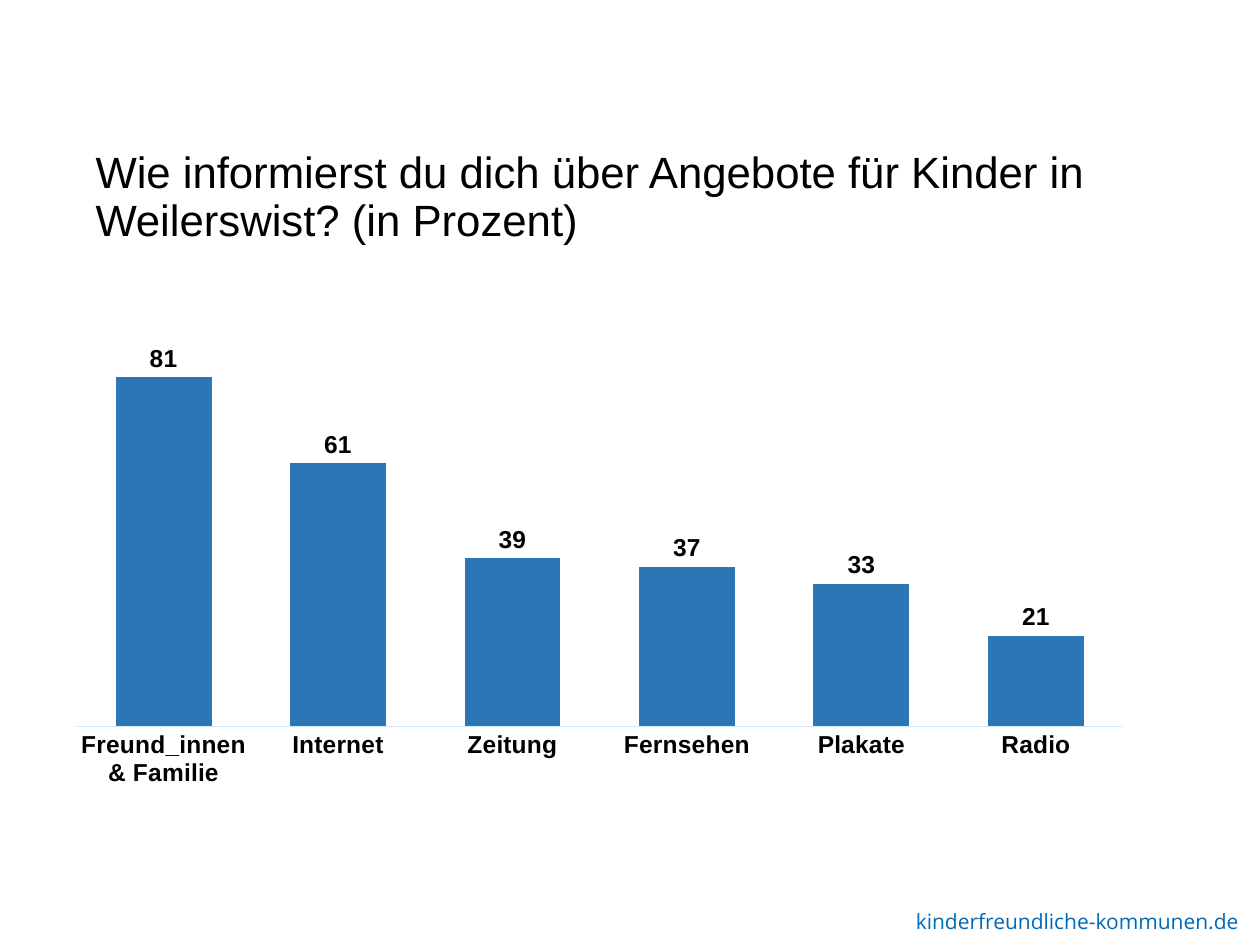
from dataclasses import dataclass

from lxml import etree
from pptx import Presentation
from pptx.chart.data import CategoryChartData
from pptx.dml.color import RGBColor
from pptx.enum.chart import XL_CHART_TYPE, XL_LABEL_POSITION, XL_TICK_MARK
from pptx.oxml.ns import qn
from pptx.util import Inches, Pt

COLUMN = XL_CHART_TYPE.COLUMN_CLUSTERED
OUTSIDE = XL_LABEL_POSITION.OUTSIDE_END
NO_TICK = XL_TICK_MARK.NONE

COLORS = {"text": "000000", "link": "0069B5", "bar": "2E75B6", "axis": "CEEAFF"}
SHARES = {
    "Freund_innen & Familie": 81,
    "Internet": 61,
    "Zeitung": 39,
    "Fernsehen": 37,
    "Plakate": 33,
    "Radio": 21,
}
PLOT = {"x": 0.05, "y": 0.12, "w": 0.91, "h": 0.64}


@dataclass
class Label:
    text: str
    box: tuple[float, float, float, float]
    font: str
    size: int
    color: str
    spacing: float = 1.0


LABELS = [
    Label("kinderfreundliche-kommunen.de", (7.17, 7.16, 2.93, 0.3),
          "Open Sans", 12, "link"),
    Label("Wie informierst du dich über Angebote für Kinder in "
          "Weilerswist? (in Prozent)", (0.66, 1.15, 8.62, 1.07),
          "Arial", 25, "text", 0.9),
]


def color(name: str) -> RGBColor:
    return RGBColor.from_string(COLORS[name])


def style(font, name: str, size: int, tint: str, bold: bool = False) -> None:
    font.name = name
    font.size = Pt(size)
    font.bold = bold
    font.color.rgb = color(tint)


def add_label(slide, label: Label) -> None:
    frame = slide.shapes.add_textbox(*map(Inches, label.box)).text_frame
    frame.word_wrap = True
    frame.text = label.text
    para = frame.paragraphs[0]
    para.line_spacing = label.spacing
    style(para.runs[0].font, label.font, label.size, label.color)


def set_plot(chart) -> None:
    area = chart._chartSpace.find(".//" + qn("c:plotArea"))
    for old in area.findall(qn("c:layout")):
        area.remove(old)
    layout = etree.Element(qn("c:layout"))
    manual = etree.SubElement(layout, qn("c:manualLayout"))
    parts = {"layoutTarget": "inner", "xMode": "edge", "yMode": "edge", **PLOT}
    for tag, value in parts.items():
        etree.SubElement(manual, qn(f"c:{tag}")).set("val", str(value))
    area.insert(0, layout)


def add_bars(slide) -> None:
    data = CategoryChartData()
    data.categories = list(SHARES)
    data.add_series("Series 1", list(SHARES.values()))
    box = map(Inches, (0.15, 2.11, 9.13, 4.81))
    chart = slide.shapes.add_chart(COLUMN, *box, data).chart
    chart.has_legend = False
    chart.has_title = False
    style(chart.font, "Arial", 14, "text", True)
    set_plot(chart)

    scale = chart.value_axis
    scale.minimum_scale = 0
    scale.maximum_scale = 90
    scale.has_major_gridlines = False
    scale.visible = False

    axis = chart.category_axis
    axis.major_tick_mark = NO_TICK
    axis.minor_tick_mark = NO_TICK
    axis.format.line.color.rgb = color("axis")
    axis.format.line.width = Pt(0.75)
    style(axis.tick_labels.font, "Arial", 14, "text", True)

    plot = chart.plots[0]
    plot.gap_width = 82
    plot.overlap = -27
    plot.vary_by_categories = False
    fill = plot.series[0].format.fill
    fill.solid()
    fill.fore_color.rgb = color("bar")
    plot.has_data_labels = True
    labels = plot.data_labels
    labels.show_value = True
    labels.position = OUTSIDE
    style(labels.font, "Arial", 14, "text", True)


def main() -> None:
    """Build the survey slide with its title, column chart and footer."""
    deck = Presentation()
    deck.slide_width = Inches(10)
    deck.slide_height = Inches(7.5)
    slide = deck.slides.add_slide(deck.slide_layouts[6])
    for label in LABELS:
        add_label(slide, label)
    add_bars(slide)
    deck.save("out.pptx")


if __name__ == "__main__":
    main()
